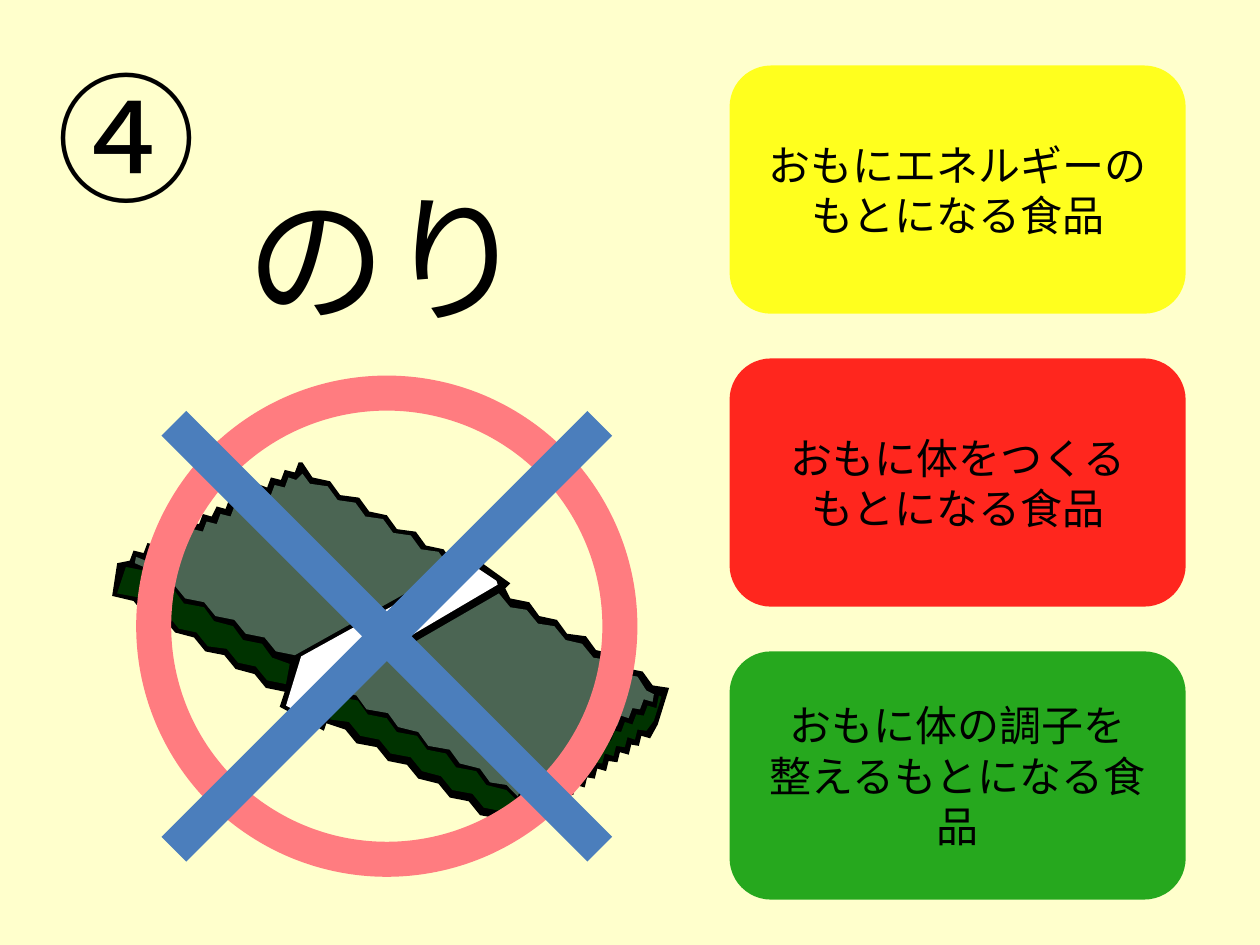
from functools import partial

from pptx import Presentation
from pptx import util as u
from pptx.dml.color import RGBColor
from pptx.enum import shapes, text
from pptx.oxml.ns import qn
from lxml import etree

CREAM = RGBColor(0xFF, 0xFF, 0xCC)
BLACK = RGBColor(0x00, 0x00, 0x00)
WHITE = RGBColor(0xFF, 0xFF, 0xFF)
SEAWEED = RGBColor(0x4B, 0x65, 0x53)
SEAWEED_EDGE = RGBColor(0x00, 0x33, 0x00)
YELLOW = RGBColor(0xFF, 0xFF, 0x00)
RED = RGBColor(0xFF, 0x00, 0x00)
GREEN = RGBColor(0x00, 0x99, 0x00)
PINK = RGBColor(0xFF, 0x7C, 0x80)
BLUE = RGBColor(0x4B, 0x7E, 0xBC)
FONT = "Noto Sans CJK JP"
COLUMNS, ROWS = 1000, 750
CARD_LEFT, CARD_TOP, CARD_WIDTH, CARD_HEIGHT, CARD_PITCH = 579, 52, 362, 197, 232.5
FOOD_GROUPS = [
    (["おもにエネルギーの", "もとになる食品"], YELLOW),
    (["おもに体をつくる", "もとになる食品"], RED),
    (["おもに体の調子を", "整えるもとになる食品"], GREEN)]


def jagged(start, end, teeth, notch):
    """Return the points of a torn edge: equal teeth, each bent at its notch."""
    (left, top), (right, bottom) = start, end
    points = []
    for tooth in range(teeth):
        x = left + (right - left) * tooth / teeth
        y = top + (bottom - top) * tooth / teeth
        points += [(x, y), (x + notch[0], y + notch[1])]
    return points + [end]


tear_forward = partial(jagged, teeth=5, notch=(9, 11))
tear_back = partial(jagged, teeth=5, notch=(-8, -11))
tear_end_down = partial(jagged, teeth=11, notch=(-3, 8))
tear_end_up = partial(jagged, teeth=11, notch=(2, -8))


def nori():
    """Return the pieces of the seaweed, back to front, as points and colour."""
    outline = [
        *tear_back((518, 544), (405, 475)), (401, 467), (405, 463), (373, 440),
        *tear_back((360, 447), (248, 379)), (240, 367),
        *tear_end_down((237, 367), (106, 437), teeth=12), (103, 445), (93, 447), (89, 473),
        *tear_forward((106, 477), (226, 549)), (222, 561), (257, 580), (259, 574),
        *tear_forward((274, 579), (397, 650)), (408, 661), (413, 656),
        *tear_end_up((420, 657), (516, 586)), (522, 575), (531, 546)]
    right_edge = [
        (262, 571), *tear_forward((277, 573), (399, 644)), (407, 654), (410, 650),
        *tear_end_up((417, 652), (513, 580)), (519, 572), (525, 553), (523, 552), (521, 562),
        *tear_end_down((514, 560), (417, 632)), (415, 640), (402, 627),
        *tear_back((386, 623), (268, 553))]
    left_edge = [
        (93, 471), *tear_forward((109, 474), (227, 543)), (230, 527),
        *tear_back((216, 522), (100, 450))]
    paper_band = [
        (239, 521), (227, 560), (255, 575), (264, 541), (395, 464), (394, 461), (373, 447)]
    left_sheet = [
        (107, 447), *tear_forward((114, 450), (234, 520)), (354, 453),
        *tear_back((356, 449), (246, 384)), (240, 376), (235, 381),
        *tear_end_down((229, 379), (121, 437), teeth=10), (118, 446), (108, 442)]
    right_sheet = [
        *tear_forward((396, 471), (506, 537)), (513, 548), (519, 551), (518, 557),
        *tear_end_down((511, 555), (413, 627)), (411, 632), (402, 623),
        *tear_back((389, 621), (267, 548)), (266, 546)]
    return [(outline, BLACK), (right_edge, SEAWEED_EDGE), (left_edge, SEAWEED_EDGE),
            (paper_band, WHITE), (left_sheet, SEAWEED), (right_sheet, SEAWEED)]


def write(frame, lines, size, align=text.PP_ALIGN.CENTER, color=BLACK, font=FONT):
    """Fill a text frame with one formatted paragraph per line."""
    frame.word_wrap = True
    for index, line in enumerate(lines):
        paragraph = frame.add_paragraph() if index else frame.paragraphs[0]
        paragraph.alignment = align
        run = paragraph.add_run()
        run.text = line
        run.font.size, run.font.name = u.Pt(size), font
        run.font.color.rgb = color
        east_asian = etree.SubElement(run.font._element, qn("a:ea"))
        east_asian.set("typeface", font)


class Board:
    """Draw on one slide with lengths in columns and rows of its grid."""

    def __init__(self, deck, background):
        self.slide = deck.slides.add_slide(deck.slide_layouts[6])
        self.slide.background.fill.solid()
        self.slide.background.fill.fore_color.rgb = background
        self.column = deck.slide_width // COLUMNS
        self.row = deck.slide_height // ROWS

    def place(self, left, top, width, height):
        return [round(length * unit) for length, unit in zip(
            (left, top, width, height), (self.column, self.row) * 2)]

    def paint(self, shape, color):
        shape.shadow.inherit = False
        shape.line.fill.background()
        shape.fill.solid()
        shape.fill.fore_color.rgb = color

    def label(self, line, area, **style):
        box = self.slide.shapes.add_textbox(*self.place(*area))
        write(box.text_frame, [line], **style)

    def card(self, lines, area, color, opacity=85):
        card = self.slide.shapes.add_shape(
            shapes.MSO_SHAPE.ROUNDED_RECTANGLE, *self.place(*area))
        self.paint(card, color)
        tint = card._element.spPr.find(qn("a:solidFill"))[0]
        etree.SubElement(tint, qn("a:alpha")).set("val", str(opacity * 1000))
        card.text_frame.vertical_anchor = text.MSO_ANCHOR.MIDDLE
        write(card.text_frame, lines, size=24)

    def drawing(self, pieces):
        group = self.slide.shapes.add_group_shape()
        for points, color in pieces:
            builder = group.shapes.build_freeform(*points[0], scale=(self.column, self.row))
            builder.add_line_segments(points[1:], close=True)
            self.paint(builder.convert_to_shape(), color)

    def ring(self, area, color, weight):
        ring = self.slide.shapes.add_shape(shapes.MSO_SHAPE.OVAL, *self.place(*area))
        ring.shadow.inherit = False
        ring.fill.background()
        ring.line.color.rgb, ring.line.width = color, u.Pt(weight)

    def cross(self, left, top, size, color, weight):
        group = self.slide.shapes.add_group_shape()
        bottom = top + size
        for start, end in ((top, bottom), (bottom, top)):
            bar = group.shapes.add_connector(
                shapes.MSO_CONNECTOR.STRAIGHT, (left + size) * self.column,
                start * self.row, left * self.column, end * self.row)
            bar.line.color.rgb, bar.line.width = color, u.Pt(weight)
            etree.SubElement(bar._element.spPr, qn("a:effectLst"))


def main():
    deck = Presentation()
    deck.slide_width, deck.slide_height = u.Inches(10), u.Inches(7.5)
    board = Board(deck, CREAM)
    board.drawing(nori())
    for index, (lines, color) in reversed(list(enumerate(FOOD_GROUPS))):
        top = CARD_TOP + CARD_PITCH * index
        board.card(lines, (CARD_LEFT, top, CARD_WIDTH, CARD_HEIGHT), color)
    board.label("④", (35, 36, 189, 145), size=80, align=text.PP_ALIGN.LEFT)
    board.label("のり", (51, 131, 512, 145), size=80)
    board.ring((122, 312, 370, 370), PINK, weight=20)
    board.cross(138, 336, 338, BLUE, weight=20)
    deck.save("out.pptx")


if __name__ == "__main__":
    main()
